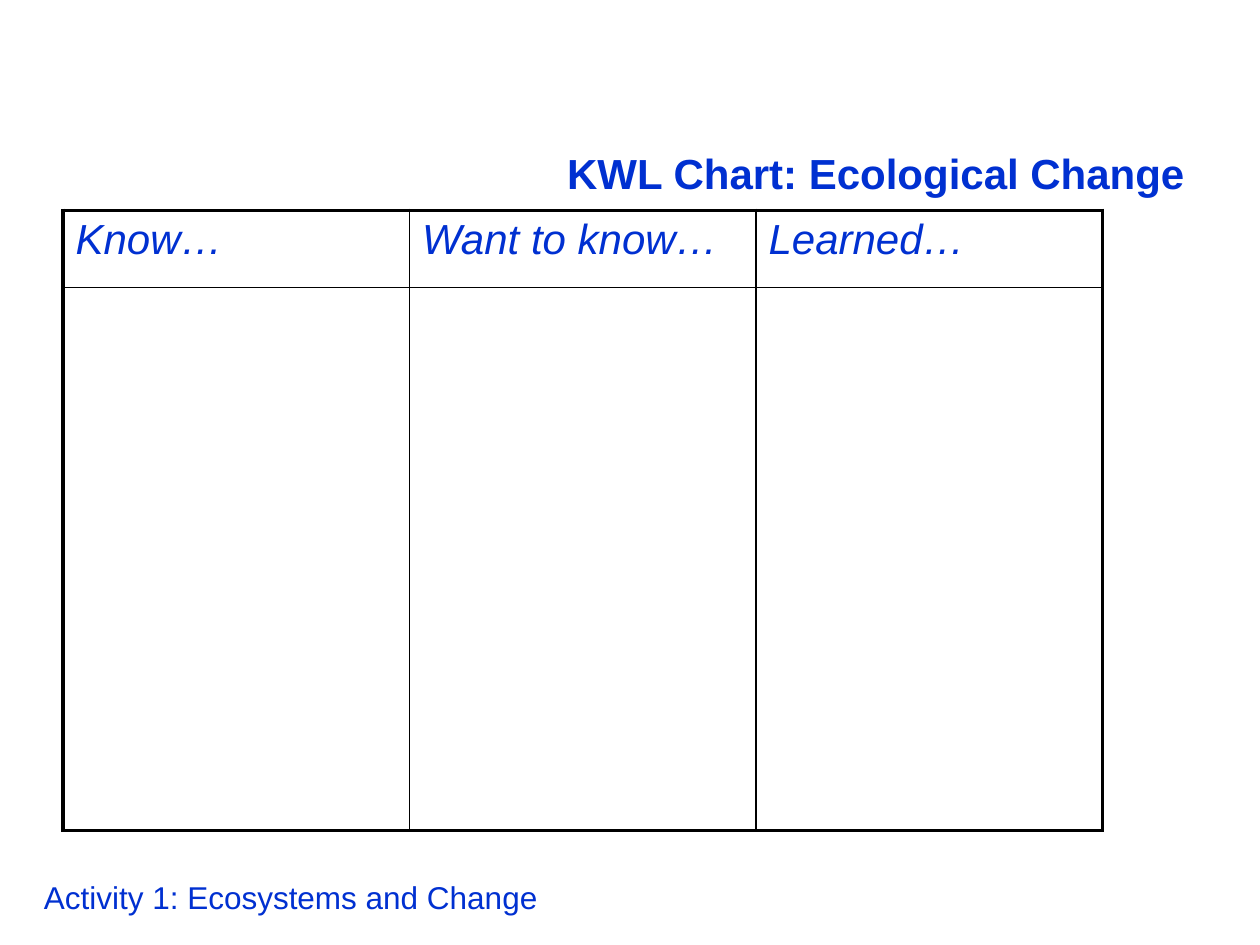
"""Build a KWL chart slide on ecological change."""
import pptx
import pptx.dml.color
import pptx.enum.text
import pptx.oxml
import pptx.oxml.ns
import pptx.util
from pptx.util import Inches, Pt

BLUE = pptx.dml.color.RGBColor(0x00, 0x30, 0xD1)
BLACK = pptx.dml.color.RGBColor(0x00, 0x00, 0x00)
FONT = "Arial"
OUTER, INNER = Pt(2.25), Pt(1)

TITLE = "KWL Chart: Ecological Change"
FOOTER = "Activity 1: Ecosystems and Change"
HEADINGS = ["Know…", "Want to know…", "Learned…"]
COLUMN_WIDTH = 2.75
ROW_HEIGHTS = [0.61, 4.31]


def style(paragraph, size, bold=False, italic=False):
    font = paragraph.font
    font.name, font.size = FONT, Pt(size)
    font.bold, font.italic = bold, italic
    font.color.rgb = BLUE


def add_label(slide, text, box, size, bold=False):
    frame = slide.shapes.add_textbox(*map(Inches, box)).text_frame
    frame.word_wrap = True
    frame.vertical_anchor = pptx.enum.text.MSO_ANCHOR.MIDDLE
    paragraph = frame.paragraphs[0]
    paragraph.text = text
    style(paragraph, size, bold=bold)
    return paragraph


def set_borders(cell, widths):
    properties = cell._tc.get_or_add_tcPr()
    for position, (side, width) in enumerate(widths.items()):
        properties.insert(position, pptx.oxml.parse_xml(
            f'<a:ln{side} {pptx.oxml.ns.nsdecls("a")} w="{int(width)}">'
            f'<a:solidFill><a:srgbClr val="{BLACK}"/></a:solidFill></a:ln{side}>'))


def add_kwl_table(slide):
    rows, columns = len(ROW_HEIGHTS), len(HEADINGS)
    table = slide.shapes.add_table(
        rows, columns, Inches(0.5), Inches(1.67),
        Inches(COLUMN_WIDTH * columns), Inches(sum(ROW_HEIGHTS))).table
    table.first_row = table.horz_banding = False
    for column in table.columns:
        column.width = Inches(COLUMN_WIDTH)
    for r, height in enumerate(ROW_HEIGHTS):
        table.rows[r].height = Inches(height)
        for c, heading in enumerate(HEADINGS):
            cell = table.cell(r, c)
            cell.fill.background()
            set_borders(cell, {
                "L": OUTER if c == 0 else INNER,
                "R": OUTER if c == columns - 1 else INNER,
                "T": OUTER if r == 0 else INNER,
                "B": OUTER if r == rows - 1 else INNER,
            })
            paragraph = cell.text_frame.paragraphs[0]
            if r == 0:
                paragraph.text = heading
            style(paragraph, 24, italic=True)


def main():
    deck = pptx.Presentation()
    deck.slide_width, deck.slide_height = Inches(10), Inches(7.5)
    slide = deck.slides.add_slide(deck.slide_layouts[6])
    add_label(slide, FOOTER, (0.25, 6.92, 6.08, 0.4), 18)
    add_kwl_table(slide)
    title = add_label(slide, TITLE, (3.75, 1.08, 5.75, 0.58), 24, bold=True)
    title.alignment = pptx.enum.text.PP_ALIGN.RIGHT
    deck.save("out.pptx")


if __name__ == "__main__":
    main()
